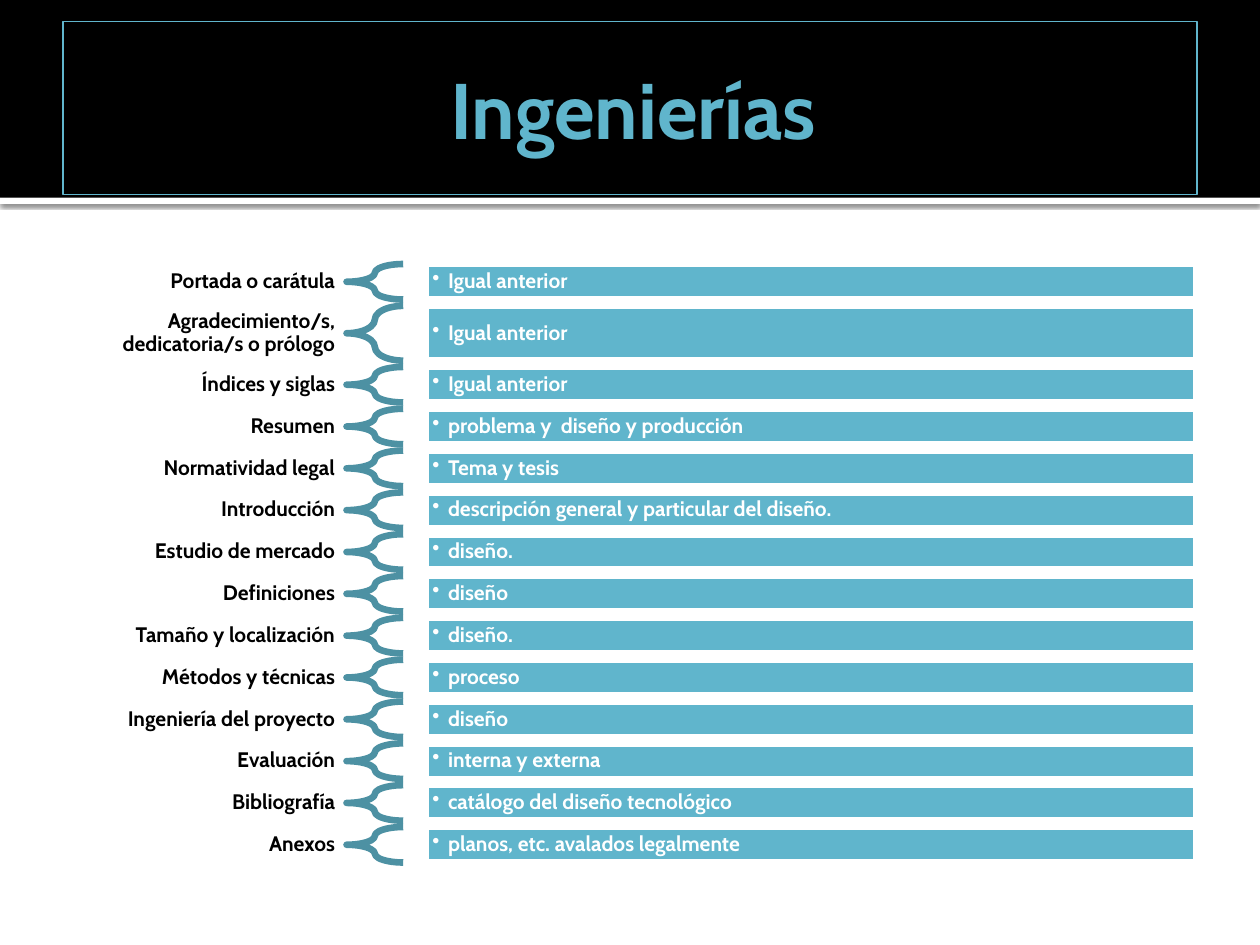
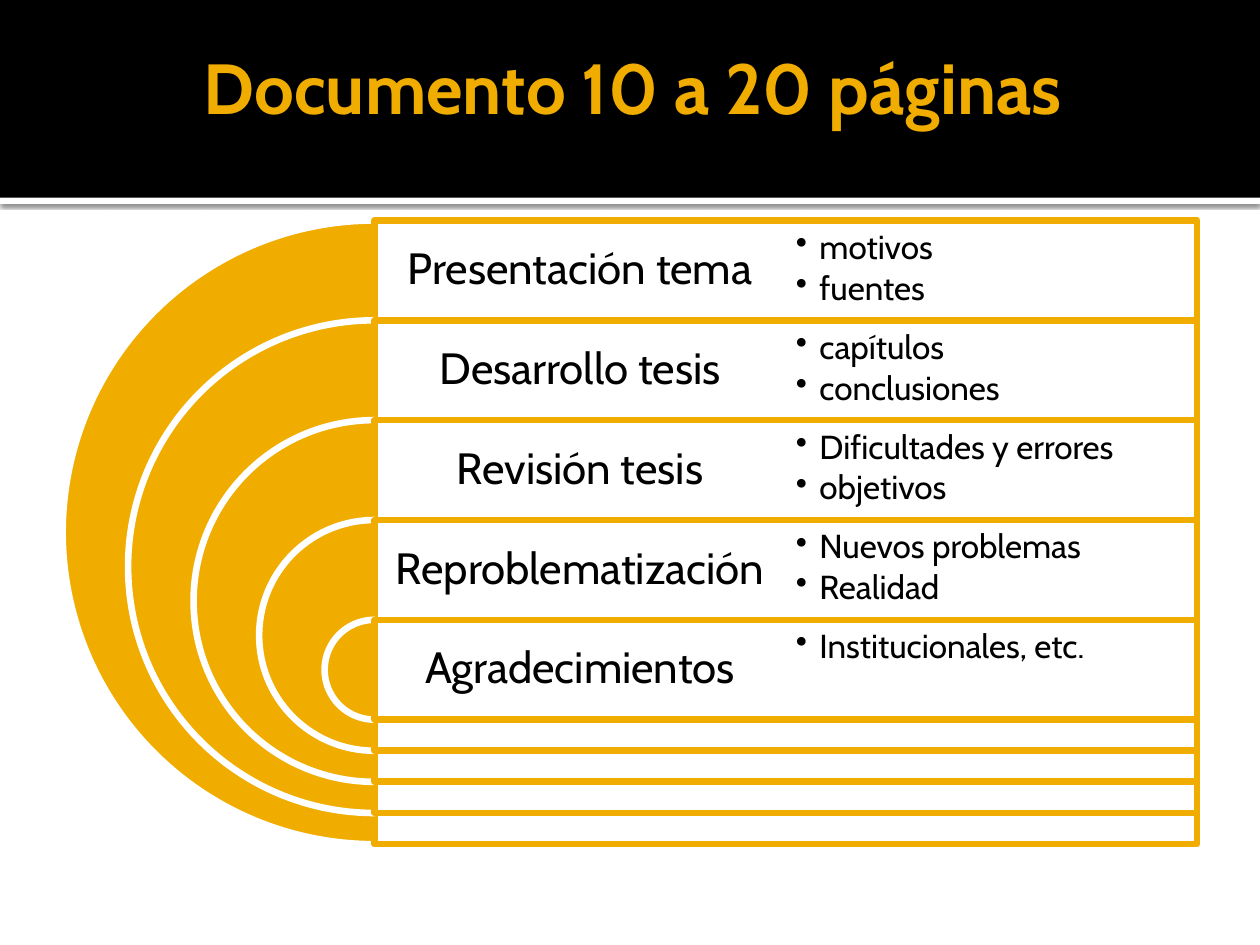
from lxml import etree
from pptx import Presentation
from pptx.dml.color import RGBColor
from pptx.enum.shapes import MSO_SHAPE
from pptx.enum.text import MSO_ANCHOR, MSO_AUTO_SIZE, PP_ALIGN
from pptx.oxml.ns import qn
from pptx.util import Pt

RECT, PIE, BRACE = MSO_SHAPE.RECTANGLE, MSO_SHAPE.PIE, MSO_SHAPE.LEFT_BRACE
TOP, MIDDLE = MSO_ANCHOR.TOP, MSO_ANCHOR.MIDDLE
LEFT, CENTER, RIGHT = PP_ALIGN.LEFT, PP_ALIGN.CENTER, PP_ALIGN.RIGHT
FONT = "Cabin"
BLACK, WHITE = "000000", "FFFFFF"
BLUE, TEAL, GOLD = "60B5CC", "4D91A3", "F0AD00"
LINE = 3.78

# Label, detail and row height
PARTS = [
    ("Portada o carátula", "Igual anterior", 20.3),
    ("Agradecimiento/s, dedicatoria/s o prólogo", "Igual anterior", 31.3),
    ("Índices y siglas", "Igual anterior", 20.3),
    ("Resumen", "problema y  diseño y producción", 20.3),
    ("Normatividad legal", "Tema y tesis", 20.3),
    ("Introducción", "descripción general y particular del diseño.", 20.3),
    ("Estudio de mercado", "diseño.", 20.3),
    ("Definiciones", "diseño", 20.3),
    ("Tamaño y localización", "diseño.", 20.3),
    ("Métodos y técnicas", "proceso", 20.3),
    ("Ingeniería del proyecto", "diseño", 20.3),
    ("Evaluación", "interna y externa", 20.3),
    ("Bibliografía", "catálogo del diseño tecnológico", 20.3),
    ("Anexos", "planos, etc. avalados legalmente", 20.3),
]
STAGES = [
    ("Presentación tema", ["motivos", "fuentes"]),
    ("Desarrollo tesis", ["capítulos", "conclusiones"]),
    ("Revisión tesis", ["Dificultades y errores", "objetivos"]),
    ("Reproblematización", ["Nuevos problemas", "Realidad"]),
    ("Agradecimientos", ["Institucionales, etc."]),
]


def color(code):
    return RGBColor.from_string(code)


def add_form(slide, kind, box, fill=None, line=None):
    form = slide.shapes.add_shape(kind, *map(Pt, box))
    form.shadow.inherit = False
    if fill:
        form.fill.solid()
        form.fill.fore_color.rgb = color(fill)
    else:
        form.fill.background()
    if line:
        form.line.color.rgb = color(line)
        form.line.width = Pt(LINE)
    else:
        form.line.fill.background()
    return form


def add_box(slide, box):
    return slide.shapes.add_textbox(*map(Pt, box))


def write(shape, lines, size, ink, bold=False, align=LEFT, anchor=MIDDLE,
          pad=(3.6, 3.6), indent=0, after=0, lead=0.9):
    """Fill a shape with paragraphs; pad is (sides, top and bottom)."""
    frame = shape.text_frame
    frame.word_wrap = True
    frame.auto_size = MSO_AUTO_SIZE.NONE
    frame.vertical_anchor = anchor
    frame.margin_left = frame.margin_right = Pt(pad[0])
    frame.margin_top = frame.margin_bottom = Pt(pad[1])
    frame.text = "\n".join(lines)
    for para in frame.paragraphs:
        para.alignment = align
        para.line_spacing = lead
        para.space_after = Pt(after)
        if indent:
            add_bullet(para, indent)
        font = para.font
        font.name, font.size, font.bold = FONT, Pt(size), bold
        font.color.rgb = color(ink)


def add_bullet(para, indent):
    props = para._p.get_or_add_pPr()
    props.set("marL", str(Pt(indent)))
    props.set("indent", str(-Pt(indent)))
    etree.SubElement(props, qn("a:buChar")).set("char", "•")


def add_shadow(form):
    effects = form.element.spPr.find(qn("a:effectLst"))
    cast = etree.SubElement(effects, qn("a:outerShdw"), blurRad=str(Pt(2.5)),
                            dist=str(Pt(0.8)), dir="5400000", rotWithShape="0")
    ink = etree.SubElement(cast, qn("a:srgbClr"), val=BLACK)
    etree.SubElement(ink, qn("a:alpha"), val="60000")


def set_bands(slide):
    """Draw the header bands and move them to the slide's layout."""
    strip = add_form(slide, RECT, (0, 113, 720, 3.6), WHITE)
    add_shadow(strip)
    band = add_form(slide, RECT, (0, 0, 720, 113), BLACK)
    tree = slide.slide_layout.shapes.element
    for spot, form in enumerate((strip, band), start=2):
        tree.insert(spot, form.element)


def set_title(slide, text, box, size, ink):
    title = slide.shapes.title
    title.left, title.top, title.width, title.height = map(Pt, box)
    write(title, [text], size, ink, True, CENTER, lead=1)
    title.text_frame.margin_left = Pt(7.2)
    return title


def draw_parts(slide):
    title = set_title(slide, "Ingenierías", (36, 12.2, 648, 98.8), 45, BLUE)
    title.line.color.rgb = color(BLUE)
    title.line.width = Pt(0.75)
    top, gap = 150.9, 3.6
    for label, detail, high in PARTS:
        write(add_box(slide, (36, top, 162, high)), [label], 12, BLACK, True,
              RIGHT, pad=(6.5, 2))
        brace = add_form(slide, BRACE, (198, top, 32.4, high), line=TEAL)
        brace.adjustments[0] = 0.35
        bar = add_form(slide, RECT, (243.4, top, 440.2, high), BLUE, WHITE)
        write(bar, [detail], 12, WHITE, True, indent=9)
        top += high + gap


def draw_stages(slide):
    set_title(slide, "Documento 10 a 20 páginas", (36, 21.6, 648, 55.4),
              40.5, GOLD)
    axis, top, row, wide = 214, 126, 57.05, 470
    size, step = 356.4, 74.85
    half = wide / 2
    for i, (stage, points) in enumerate(STAGES):
        y, side = top + i * row, size - i * step
        pie = add_form(slide, PIE, (axis - side / 2, y, side, side),
                       GOLD, WHITE)
        pie.adjustments[0], pie.adjustments[1] = 54, 162
        add_form(slide, RECT, (axis, y, wide, side), WHITE, GOLD)
        write(add_box(slide, (axis, y, half, row)), [stage], 25, BLACK,
              align=CENTER, pad=(7.2, 7.2))
        write(add_box(slide, (axis + half, y, half, row)), points, 19, BLACK,
              anchor=TOP, pad=(5.8, 5.8), indent=13.5, after=2.85)


def main():
    deck = Presentation()
    deck.slide_width, deck.slide_height = Pt(720), Pt(540)
    layout = deck.slide_layouts.get_by_name("Title Only")
    first, second = [deck.slides.add_slide(layout) for _ in range(2)]
    set_bands(first)
    draw_parts(first)
    draw_stages(second)
    deck.save("out.pptx")


if __name__ == "__main__":
    main()
